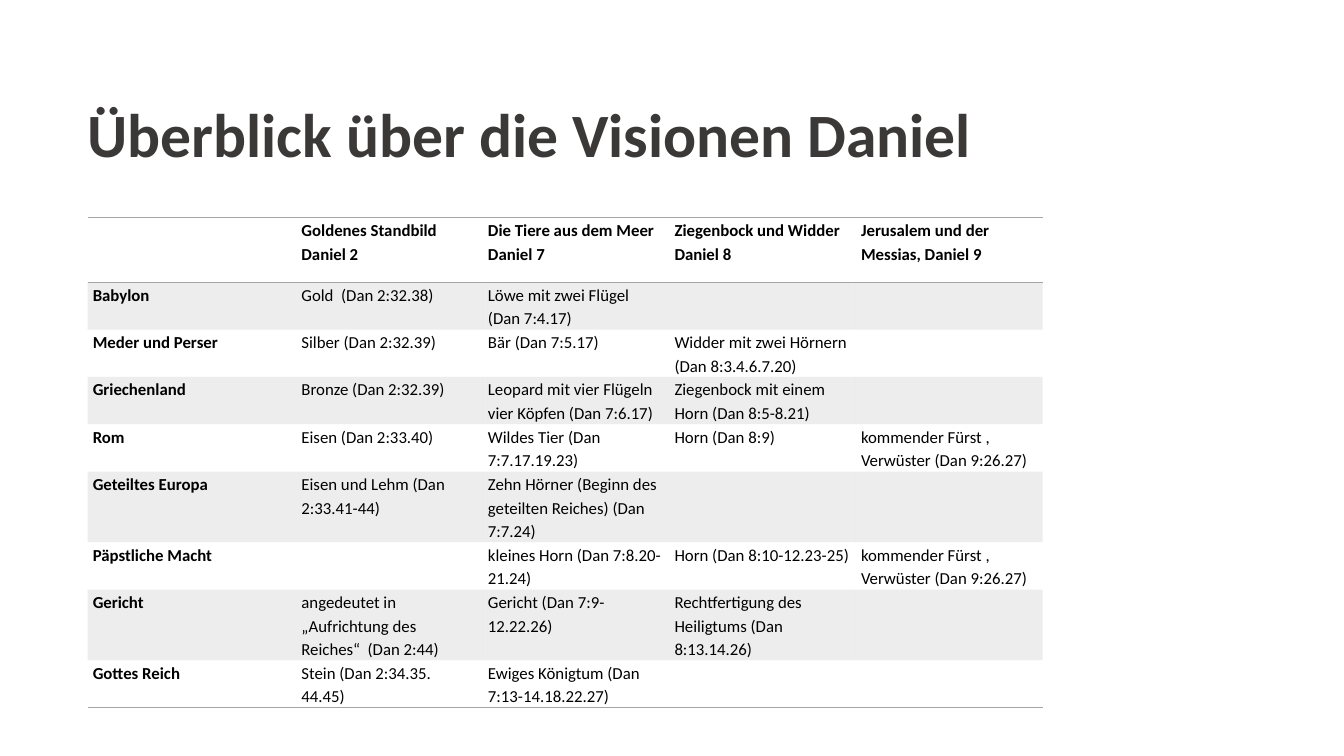
"""Build the overview slide of Daniel's visions."""
from dataclasses import dataclass

from lxml import etree
from pptx import Presentation
from pptx import util as u
from pptx.dml.color import RGBColor
from pptx.enum import text as t
from pptx.oxml import ns

Inches = u.Inches


@dataclass(frozen=True)
class Theme:
    """Colours, font and type sizes of the slide."""
    font: str = "Calibri"
    head: str = "3B3838"
    ink: str = "000000"
    grey: str = "A5A5A5"
    big: int = 44
    small: int = 12
    clear: str = "{2D5ABB26-0587-4C30-8999-92F81FD0307C}"


THEME = Theme()
ROWS = [
    ["", "Goldenes Standbild\nDaniel 2", "Die Tiere aus dem Meer\nDaniel 7",
     "Ziegenbock und Widder\nDaniel 8", "Jerusalem und der Messias, Daniel 9"],
    ["Babylon", "Gold  (Dan 2:32.38)", "Löwe mit zwei Flügel (Dan 7:4.17)", "", ""],
    ["Meder und Perser", "Silber (Dan 2:32.39)", "Bär (Dan 7:5.17)",
     "Widder mit zwei Hörnern (Dan 8:3.4.6.7.20)", ""],
    ["Griechenland", "Bronze (Dan 2:32.39)",
     "Leopard mit vier Flügeln vier Köpfen (Dan 7:6.17)",
     "Ziegenbock mit einem Horn (Dan 8:5-8.21)", ""],
    ["Rom", "Eisen (Dan 2:33.40)", "Wildes Tier (Dan 7:7.17.19.23)",
     "Horn (Dan 8:9)", "kommender Fürst , Verwüster (Dan 9:26.27)"],
    ["Geteiltes Europa", "Eisen und Lehm (Dan 2:33.41-44)",
     "Zehn Hörner (Beginn des geteilten Reiches) (Dan 7:7.24)", "", ""],
    ["Päpstliche Macht", "", "kleines Horn (Dan 7:8.20-21.24)",
     "Horn (Dan 8:10-12.23-25)", "kommender Fürst , Verwüster (Dan 9:26.27)"],
    ["Gericht", "angedeutet in „Aufrichtung des Reiches“  (Dan 2:44)",
     "Gericht (Dan 7:9-12.22.26)",
     "Rechtfertigung des Heiligtums (Dan 8:13.14.26)", ""],
    ["Gottes Reich", "Stein (Dan 2:34.35. 44.45)",
     "Ewiges Königtum (Dan 7:13-14.18.22.27)", "", ""],
]
WIDTHS = [2.07] + [1.85] * 4
HEIGHTS = [0.64] + [0.47] * 4 + [0.7, 0.47, 0.7, 0.47]


def add_run(para, words, size, color, bold):
    """Add one formatted run to a paragraph."""
    run = para.add_run()
    run.text = words
    font = run.font
    font.name, font.size, font.bold = THEME.font, u.Pt(size), bold
    font.color.rgb = RGBColor.from_string(color)


def set_pad(box, left, top, right, base):
    """Set the inner margins of a cell or text frame."""
    box.margin_left, box.margin_top = Inches(left), Inches(top)
    box.margin_right, box.margin_bottom = Inches(right), Inches(base)


def add_title(slide, words):
    """Place and fill the title."""
    title = slide.shapes.title
    title.left, title.top = Inches(0.87), Inches(0.4)
    title.width, title.height = Inches(11.53), Inches(1.34)
    frame = title.text_frame
    frame.word_wrap = True
    frame.auto_size = t.MSO_AUTO_SIZE.NONE
    frame.vertical_anchor = t.MSO_ANCHOR.BOTTOM
    set_pad(frame, 0, 0.05, 0.1, 0.05)
    para = frame.paragraphs[0]
    para.alignment, para.line_spacing = t.PP_ALIGN.LEFT, 0.9
    add_run(para, words, THEME.big, THEME.head, True)


def add_words(cell, words, bold):
    """Write the lines of a cell as runs of one paragraph."""
    para = cell.text_frame.paragraphs[0]
    para.line_spacing, para.space_after = 1.15, u.Pt(10)
    for i, line in enumerate(words.split("\n")):
        if i:
            para.add_line_break()
        add_run(para, line, THEME.small, THEME.ink, bold)


def set_fill(cell, band):
    """Give a banded cell a pale grey fill and clear the others."""
    if not band:
        cell.fill.background()
        return
    cell.fill.solid()
    cell.fill.fore_color.rgb = RGBColor.from_string(THEME.grey)
    tint = cell._tc.tcPr.find(".//" + ns.qn("a:srgbClr"))
    etree.SubElement(tint, ns.qn("a:alpha"), val="20000")


def set_rules(cell, sides):
    """Draw grey rules on the named sides of a cell."""
    props = cell._tc.get_or_add_tcPr()
    for i, side in enumerate(sides):
        line = etree.Element(ns.qn("a:ln" + side), w=str(u.Pt(1)))
        fill = etree.SubElement(line, ns.qn("a:solidFill"))
        etree.SubElement(fill, ns.qn("a:srgbClr"), val=THEME.grey)
        props.insert(i, line)


def add_grid(slide):
    """Add the table of visions."""
    frame = slide.shapes.add_table(
        len(ROWS), len(WIDTHS), Inches(0.87), Inches(2.16),
        Inches(sum(WIDTHS)), Inches(sum(HEIGHTS)))
    grid = frame.table
    grid._tbl.tblPr.find(ns.qn("a:tableStyleId")).text = THEME.clear
    grid.horz_banding = False
    for col, width in zip(grid.columns, WIDTHS):
        col.width = Inches(width)
    rules = {0: "TB", len(ROWS) - 1: "B"}
    for r, row in enumerate(ROWS):
        grid.rows[r].height = Inches(HEIGHTS[r])
        for c, words in enumerate(row):
            cell = grid.cell(r, c)
            set_pad(cell, 0.05, 0, 0.05, 0)
            if words:
                add_words(cell, words, r == 0 or c == 0)
            set_fill(cell, r % 2 == 1)
            set_rules(cell, rules.get(r, ""))


def main():
    """Build and save the slide."""
    deck = Presentation()
    deck.slide_width, deck.slide_height = Inches(13.33), Inches(7.5)
    slide = deck.slides.add_slide(deck.slide_layouts[5])
    add_grid(slide)
    add_title(slide, "Überblick über die Visionen Daniel")
    deck.save("out.pptx")


if __name__ == "__main__":
    main()
